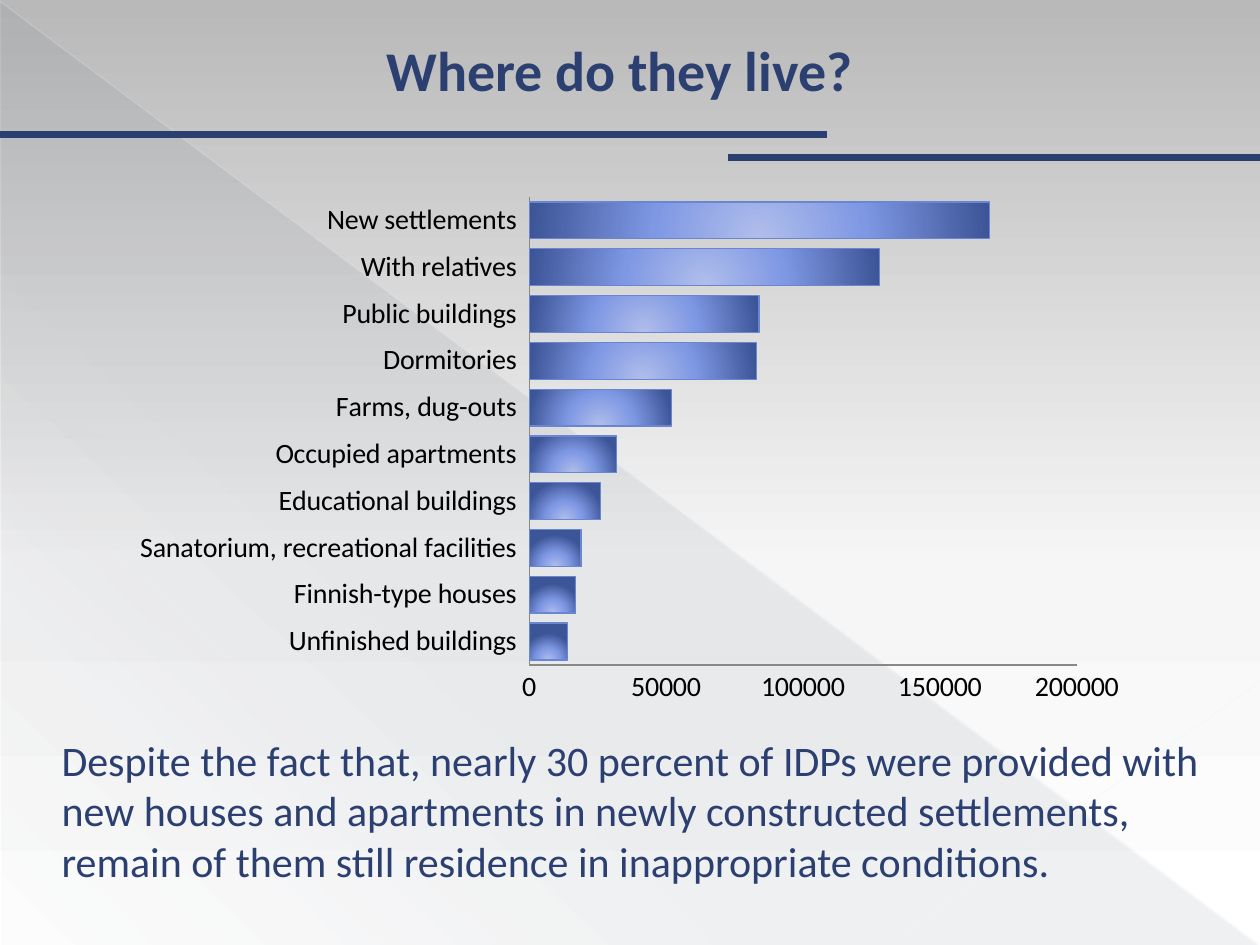
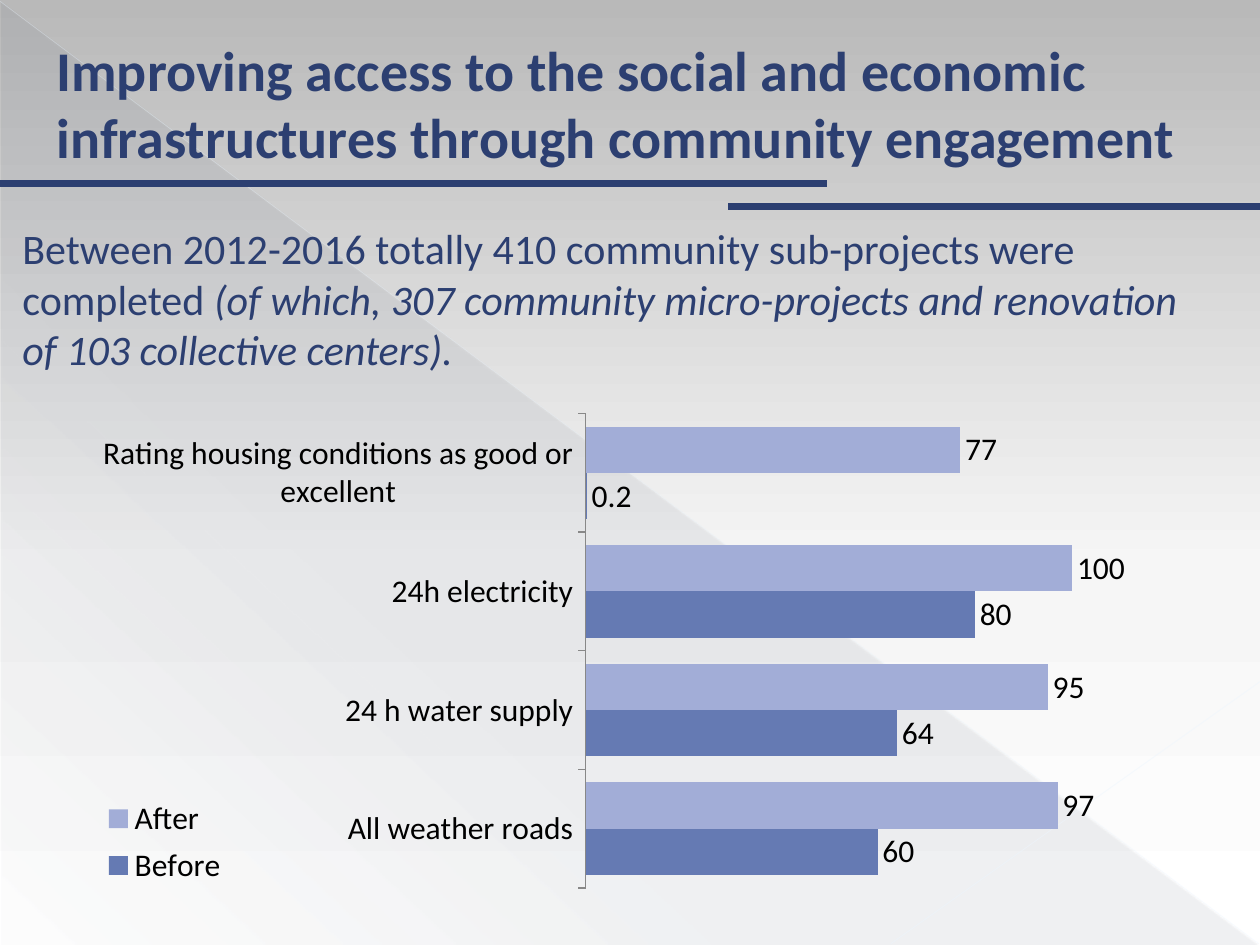
from dataclasses import dataclass
from lxml.etree import SubElement
from pptx import Presentation
from pptx.chart.data import CategoryChartData
from pptx.dml.color import RGBColor
from pptx.enum.chart import XL_CHART_TYPE as ChartType, XL_LEGEND_POSITION as LegendPosition
from pptx.enum.chart import XL_TICK_LABEL_POSITION as LabelPosition, XL_TICK_MARK as TickMark
from pptx.enum.chart import XL_LABEL_POSITION as DataLabelPosition
from pptx.enum.shapes import MSO_CONNECTOR as Connector, MSO_SHAPE as Preset
from pptx.enum.text import MSO_AUTO_SIZE as AutoSize
from pptx.oxml import parse_xml
from pptx.oxml.ns import nsdecls, qn
from pptx.util import Inches, Pt


@dataclass(frozen=True)
class Theme:
    """Colours and type sizes of the deck."""
    font: str = "Calibri"
    navy: str = "2C3F71"
    black: str = "000000"
    axis: str = "888888"
    bar_edge: str = "6B86D0"
    title_size: int = 32
    body_size: int = 24
    rule_width: float = 4
    backdrop: tuple = ((0, "B9B9B9", 100), (60, "F6F6F6", 100), (100, "FFFFFF", 100))
    veil: tuple = ((0, "4E5B6F", 10), (70, "4E5B6F", 8), (100, "4E5B6F", 1))
    glow: tuple = ((0, "B1BEEB", 100), (46, "7F98E4", 100), (100, "3C5597", 100))


THEME = Theme()
COLUMNS, ROWS = 100, 75
CELL = 0.1
RULE_GAP = 1.8
DIAGONALS = [
    ((0, 0.1), (99.9, 74.9), "EAF5FF", 0.39, 35),
    ((COLUMNS, 54.1), (70.7, 74.9), "ECF6FF", 0.47, 45),
]
DOWN = '<a:lin ang="5400000" scaled="0"/>'
SLANTED = '<a:lin ang="7980000" scaled="0"/>'
FROM_BELOW = ('<a:path path="circle"><a:fillToRect l="50000" t="155000" '
              'r="50000" b="-55000"/></a:path>')

SLIDES = [
    {
        "title": [[("Where do they live?", False)]],
        "title_box": (29.7, 2.3, 39.4, 6.4),
        "rule_row": 10.7,
        "body": [[("Despite the fact that, nearly 30 percent of IDPs were provided with new houses "
                   "and apartments in newly constructed settlements, remain of them still residence "
                   "in inappropriate conditions.", False)]],
        "body_box": (3.9, 57.8, 93.8, 13.1),
        "body_wrap": True,
        "chart": {
            "box": (9.8, 14.8, 80.5, 42.2),
            "plot": (0.4, 0.02, 0.54, 0.88),
            "size": 16, "gap": 27, "maximum": 200000, "step": 50000,
            "tick": TickMark.NONE, "value_axis": True,
            "rows": [
                ("Unfinished buildings", 14000), ("Finnish-type houses", 17000),
                ("Sanatorium, recreational facilities", 19000),
                ("Educational buildings", 26000), ("Occupied apartments", 32000),
                ("Farms, dug-outs", 52000), ("Dormitories", 83000),
                ("Public buildings", 84000), ("With relatives", 128000),
                ("New settlements", 168000),
            ],
            "series": [("Series 1", None)],
        },
    },
    {
        "title": [[("Improving access to the social and economic", False)],
                  [("infrastructures through community engagement", False)]],
        "title_box": (3.5, 2.3, 92.5, 11.8),
        "rule_row": 14.6,
        "body": [[("Between 2012-2016 totally 410 community sub-projects were", False)],
                 [("completed ", False),
                  ("(of which, 307 community micro-projects and renovation", True)],
                 [("of 103 collective centers).", True)]],
        "body_box": (0.8, 17.2, 95.4, 13.1),
        "body_wrap": False,
        "chart": {
            "box": (5.5, 31.2, 89.1, 40.5),
            "plot": (0.46, 0.04, 0.52, 0.93),
            "legend": (0.02, 0.78, 0.13, 0.2),
            "size": 18, "gap": 57, "maximum": 120, "step": 20,
            "tick": TickMark.OUTSIDE, "value_axis": False,
            "rows": [
                ("All weather roads", 60, 97), ("24 h water supply", 64, 95),
                ("24h electricity", 80, 100),
                ("Rating housing conditions as good or excellent", 0.2, 77),
            ],
            "series": [("Before", "657AB3"), ("After", "A2ADD7")],
        },
    },
]


def on_grid(cells):
    return [Inches(cell * CELL) for cell in cells]


def color(code):
    return RGBColor.from_string(code)


def paint_gradient(fill, element, stops, direction):
    fill.solid()
    fill.fore_color.rgb = color(THEME.black)
    solid = next(element.iter(qn("a:solidFill")))
    marks = "".join(
        f'<a:gs pos="{position * 1000}"><a:srgbClr val="{code}">'
        f'<a:alpha val="{opacity * 1000}"/></a:srgbClr></a:gs>'
        for position, code, opacity in stops)
    gradient = parse_xml(f'<a:gradFill {nsdecls("a")} rotWithShape="1">'
                         f'<a:gsLst>{marks}</a:gsLst>{direction}</a:gradFill>')
    solid.getparent().replace(solid, gradient)


def add_line(slide, start, end, code, width, opacity=100):
    line = slide.shapes.add_connector(Connector.STRAIGHT, *on_grid(start + end))
    line.line.color.rgb = color(code)
    line.line.width = Pt(width)
    properties = line.element.spPr
    if opacity < 100:
        tint = next(properties.iter(qn("a:srgbClr")))
        SubElement(tint, qn("a:alpha")).set("val", str(opacity * 1000))
    SubElement(properties, qn("a:effectLst"))


def add_backdrop(slide):
    paint_gradient(slide.background.fill, slide.element, THEME.backdrop, DOWN)
    veil = slide.shapes.add_shape(Preset.RIGHT_TRIANGLE, *on_grid((0.1, 0.2, 99.8, 74.8)))
    veil.shadow.inherit = False
    paint_gradient(veil.fill, veil.element.spPr, THEME.veil, SLANTED)
    veil.line.fill.background()
    for diagonal in DIAGONALS:
        add_line(slide, *diagonal)


def add_text(slide, box, paragraphs, size, bold=False, wrap=False):
    frame = slide.shapes.add_textbox(*on_grid(box)).text_frame
    frame.word_wrap = wrap
    frame.auto_size = AutoSize.SHAPE_TO_FIT_TEXT
    for index, pieces in enumerate(paragraphs):
        paragraph = frame.add_paragraph() if index else frame.paragraphs[0]
        for text, italic in pieces:
            run = paragraph.add_run()
            run.text = text
            run.font.name = THEME.font
            run.font.size = Pt(size)
            run.font.bold = bold
            run.font.italic = italic
            run.font.color.rgb = color(THEME.navy)


def add_rules(slide, row):
    add_line(slide, (0, row), (65.6, row), THEME.navy, THEME.rule_width)
    lower = row + RULE_GAP
    add_line(slide, (57.8, lower), (COLUMNS, lower), THEME.navy, THEME.rule_width)


def place(element, index, shares, target=""):
    for old in element.findall(qn("c:layout")):
        element.remove(old)
    modes = '<c:xMode val="edge"/><c:yMode val="edge"/>'
    sizes = "".join(f'<c:{name} val="{share}"/>' for name, share in zip("xywh", shares))
    element.insert(index, parse_xml(
        f'<c:layout {nsdecls("c")}><c:manualLayout>{target}{modes}{sizes}'
        '</c:manualLayout></c:layout>'))


def style_axes(chart, details):
    categories, values = chart.category_axis, chart.value_axis
    values.minimum_scale = 0
    values.maximum_scale = details["maximum"]
    values.major_unit = details["step"]
    values.has_major_gridlines = False
    values.visible = details["value_axis"]
    categories.tick_label_position = LabelPosition.LOW
    for axis in (categories, values):
        axis.major_tick_mark = details["tick"]
        axis.minor_tick_mark = TickMark.NONE
        axis.format.line.color.rgb = color(THEME.axis)
    values.tick_labels.number_format = "General"
    values.tick_labels.number_format_is_linked = False


def style_series(series, code):
    if code:
        series.format.fill.solid()
        series.format.fill.fore_color.rgb = color(code)
        labels = series.data_labels
        labels.show_value = True
        labels.position = DataLabelPosition.OUTSIDE_END
    else:
        paint_gradient(series.format.fill, series._element, THEME.glow, FROM_BELOW)
        series.format.line.color.rgb = color(THEME.bar_edge)
        series.format.line.width = Pt(0.75)


def add_bar_chart(slide, details):
    names, *columns = zip(*details["rows"])
    data = CategoryChartData()
    data.categories = names
    for (name, _), values in zip(details["series"], columns):
        data.add_series(name, values)
    chart = slide.shapes.add_chart(
        ChartType.BAR_CLUSTERED, *on_grid(details["box"]), data).chart
    chart.has_title = False
    chart.font.name = THEME.font
    chart.font.size = Pt(details["size"])
    chart.font.color.rgb = color(THEME.black)
    plot = chart.plots[0]
    plot.vary_by_categories = False
    plot.gap_width = details["gap"]
    style_axes(chart, details)
    for series, (_, code) in zip(plot.series, details["series"]):
        style_series(series, code)
    area = next(chart.element.iter(qn("c:plotArea"))) if hasattr(chart, "element") \
        else next(chart._chartSpace.iter(qn("c:plotArea")))
    place(area, 0, details["plot"], '<c:layoutTarget val="inner"/>')
    chart.has_legend = "legend" in details
    if chart.has_legend:
        chart.legend.position = LegendPosition.RIGHT
        chart.legend.include_in_layout = False
        place(chart.legend._element, 1, details["legend"])


def main():
    """Build the two slides and save them."""
    presentation = Presentation()
    presentation.slide_width, presentation.slide_height = on_grid((COLUMNS, ROWS))
    for content in SLIDES:
        slide = presentation.slides.add_slide(presentation.slide_layouts[6])
        add_backdrop(slide)
        add_text(slide, content["title_box"], content["title"], THEME.title_size, bold=True)
        add_rules(slide, content["rule_row"])
        add_bar_chart(slide, content["chart"])
        add_text(slide, content["body_box"], content["body"], THEME.body_size,
                 wrap=content["body_wrap"])
    presentation.save("out.pptx")


if __name__ == "__main__":
    main()
